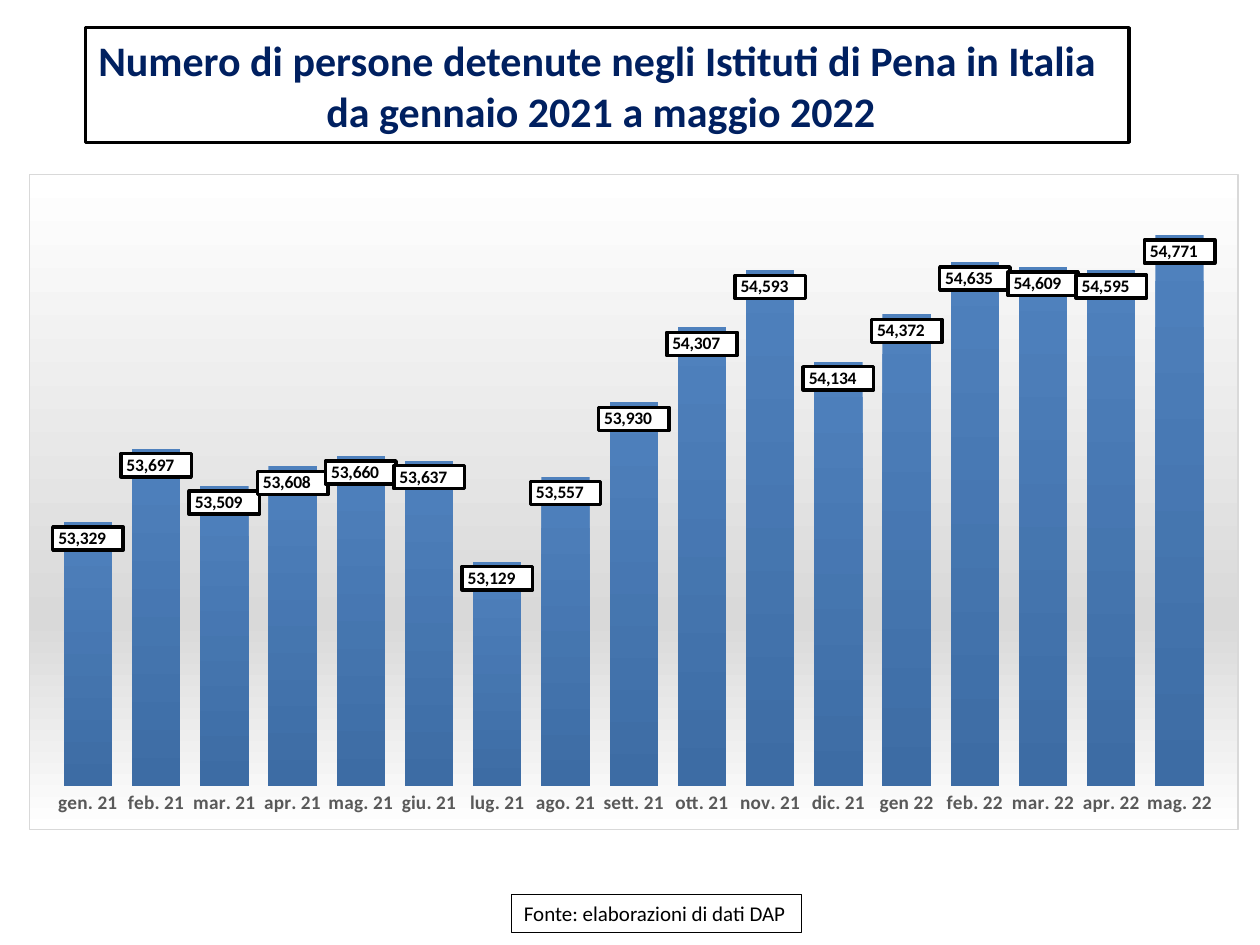
from lxml import etree
from pptx import Presentation
from pptx.chart.data import CategoryChartData
from pptx.dml.color import RGBColor
from pptx.enum.chart import XL_CHART_TYPE as ChartType
from pptx.enum.chart import XL_LABEL_POSITION as LabelPosition
from pptx.enum.chart import XL_TICK_MARK as TickMark
from pptx.enum.text import MSO_ANCHOR as Anchor
from pptx.enum.text import MSO_AUTO_SIZE as AutoSize
from pptx.enum.text import PP_ALIGN as Align
from pptx.oxml import parse_xml
from pptx.oxml.ns import nsdecls, qn
from pptx.util import Inches, Pt

BLACK = RGBColor(0x00, 0x00, 0x00)
WHITE = RGBColor(0xFF, 0xFF, 0xFF)
NAVY = RGBColor(0x00, 0x20, 0x60)
AXIS_GREY = RGBColor(0x59, 0x59, 0x59)
PALE_GREY = RGBColor(0xD9, 0xD9, 0xD9)
BAR_TOP = RGBColor(0x4F, 0x81, 0xBD)
BAR_BOTTOM = RGBColor(0x3D, 0x6C, 0xA4)

NUMBER_FORMAT = r'_-* #,##0\ _€_-;\-* #,##0\ _€_-;_-* "-"?'
PLOT_LAYOUT = {"x": 0.02, "y": 0.023, "w": 0.96, "h": 0.911}

DETAINEES = {
    "gen. 21": 53329, "feb. 21": 53697, "mar. 21": 53509, "apr. 21": 53608,
    "mag. 21": 53660, "giu. 21": 53637, "lug. 21": 53129, "ago. 21": 53557,
    "sett. 21": 53930, "ott. 21": 54307, "nov. 21": 54593, "dic. 21": 54134,
    "gen 22": 54372, "feb. 22": 54635, "mar. 22": 54609, "apr. 22": 54595,
    "mag. 22": 54771,
}


def format_font(font, size, color=BLACK, bold=False):
    font.name = "Calibri"
    font.size = Pt(size)
    font.bold = bold
    font.color.rgb = color


def add_text(para, text, align=Align.LEFT, **style):
    para.alignment = align
    span = para.add_run()
    span.text = text
    format_font(span.font, **style)


def solid(color):
    return f'<a:solidFill><a:srgbClr val="{color}"/></a:solidFill>'


def gradient(*stops):
    """Vertical gradient fill from (percent, color) stops."""
    marks = "".join(
        f'<a:gs pos="{percent * 1000}"><a:srgbClr val="{color}"/></a:gs>'
        for percent, color in stops)
    return (f'<a:gradFill rotWithShape="1"><a:gsLst>{marks}</a:gsLst>'
            '<a:lin ang="5400000" scaled="0"/></a:gradFill>')


def chart_style(fill, line=None, width=0):
    """Chart shape properties with the given fill and optional border."""
    border = solid(line) if line is not None else "<a:noFill/>"
    return parse_xml(
        f'<c:spPr {nsdecls("c", "a")}>{fill}'
        f'<a:ln w="{Pt(width)}">{border}</a:ln></c:spPr>')


def place_plot(plot_area):
    for old in plot_area.findall(qn("c:layout")):
        plot_area.remove(old)
    layout = etree.Element(qn("c:layout"))
    manual = etree.SubElement(layout, qn("c:manualLayout"))
    settings = {"layoutTarget": "inner", "xMode": "edge", "yMode": "edge"}
    for name, value in {**settings, **PLOT_LAYOUT}.items():
        etree.SubElement(manual, qn(f"c:{name}"), val=str(value))
    plot_area.insert(0, layout)


class SlideBuilder:
    def __init__(self, page):
        self.page = page

    def frame(self, box, line_width, right_inset=0.1):
        """Give a text box its white fill and black border."""
        box.fill.solid()
        box.fill.fore_color.rgb = WHITE
        box.line.color.rgb = BLACK
        box.line.width = Pt(line_width)
        text_frame = box.text_frame
        text_frame.word_wrap = True
        text_frame.auto_size = AutoSize.NONE
        text_frame.vertical_anchor = Anchor.MIDDLE
        text_frame.margin_right = Inches(right_inset)
        return text_frame

    def title(self, first_line, second_line):
        box = self.page.shapes.title
        box.left, box.top = Inches(0.68), Inches(0.22)
        box.width, box.height = Inches(8.28), Inches(0.91)
        text_frame = self.frame(box, 2, right_inset=0.2)
        style = {"size": 24, "color": NAVY, "bold": True}
        add_text(text_frame.paragraphs[0], first_line, **style)
        add_text(text_frame.add_paragraph(), second_line, Align.CENTER, **style)

    def source_note(self, text):
        box = self.page.shapes.add_textbox(
            Inches(4.06), Inches(7.1), Inches(2.3), Inches(0.3))
        add_text(self.frame(box, 0.75).paragraphs[0], text, size=12)

    def column_chart(self, values):
        data = CategoryChartData(number_format=NUMBER_FORMAT)
        data.categories = list(values)
        data.add_series("Series 1", list(values.values()))
        chart = self.page.shapes.add_chart(
            ChartType.COLUMN_CLUSTERED, Inches(0.23), Inches(1.38),
            Inches(9.6), Inches(5.21), data).chart
        chart.has_legend = False
        chart.has_title = False
        format_font(chart.font, 10)
        chart_element = chart.element.find(qn("c:chart"))
        background = gradient((0, WHITE), (68, PALE_GREY), (100, WHITE))
        chart_element.addnext(chart_style(background, PALE_GREY, 0.75))
        place_plot(chart_element.find(qn("c:plotArea")))
        self.axes(chart)
        self.columns(chart.plots[0])

    def axes(self, chart):
        months = chart.category_axis
        months.major_tick_mark = months.minor_tick_mark = TickMark.NONE
        months.format.line.fill.background()
        format_font(months.tick_labels.font, 11, AXIS_GREY, bold=True)
        amounts = chart.value_axis
        amounts.minimum_scale, amounts.maximum_scale = 52000, 55000
        amounts.has_major_gridlines = False
        amounts.visible = False

    def columns(self, plot):
        plot.gap_width = 41
        plot.vary_by_categories = False
        series = plot.series[0]
        series.format.fill.gradient()
        style = series.format.fill
        style.gradient_angle = 270
        for stop, color in zip(style.gradient_stops, (BAR_TOP, BAR_BOTTOM)):
            stop.color.rgb = color
        series.format.line.fill.background()
        labels = series.data_labels
        labels.show_value = True
        labels.position = LabelPosition.INSIDE_END
        labels.number_format = NUMBER_FORMAT
        labels.number_format_is_linked = False
        format_font(labels.font, 10, bold=True)
        number_format = series._element.find(
            f'{qn("c:dLbls")}/{qn("c:numFmt")}')
        number_format.addnext(chart_style(solid(WHITE), BLACK, 2))


def main():
    deck = Presentation()
    deck.slide_width, deck.slide_height = Inches(10), Inches(7.5)
    builder = SlideBuilder(deck.slides.add_slide(deck.slide_layouts[5]))
    builder.title("Numero di persone detenute negli Istituti di Pena in Italia",
                  "da gennaio 2021 a maggio 2022")
    builder.source_note("Fonte: elaborazioni di dati DAP")
    builder.column_chart(DETAINEES)
    deck.save("out.pptx")


if __name__ == "__main__":
    main()
